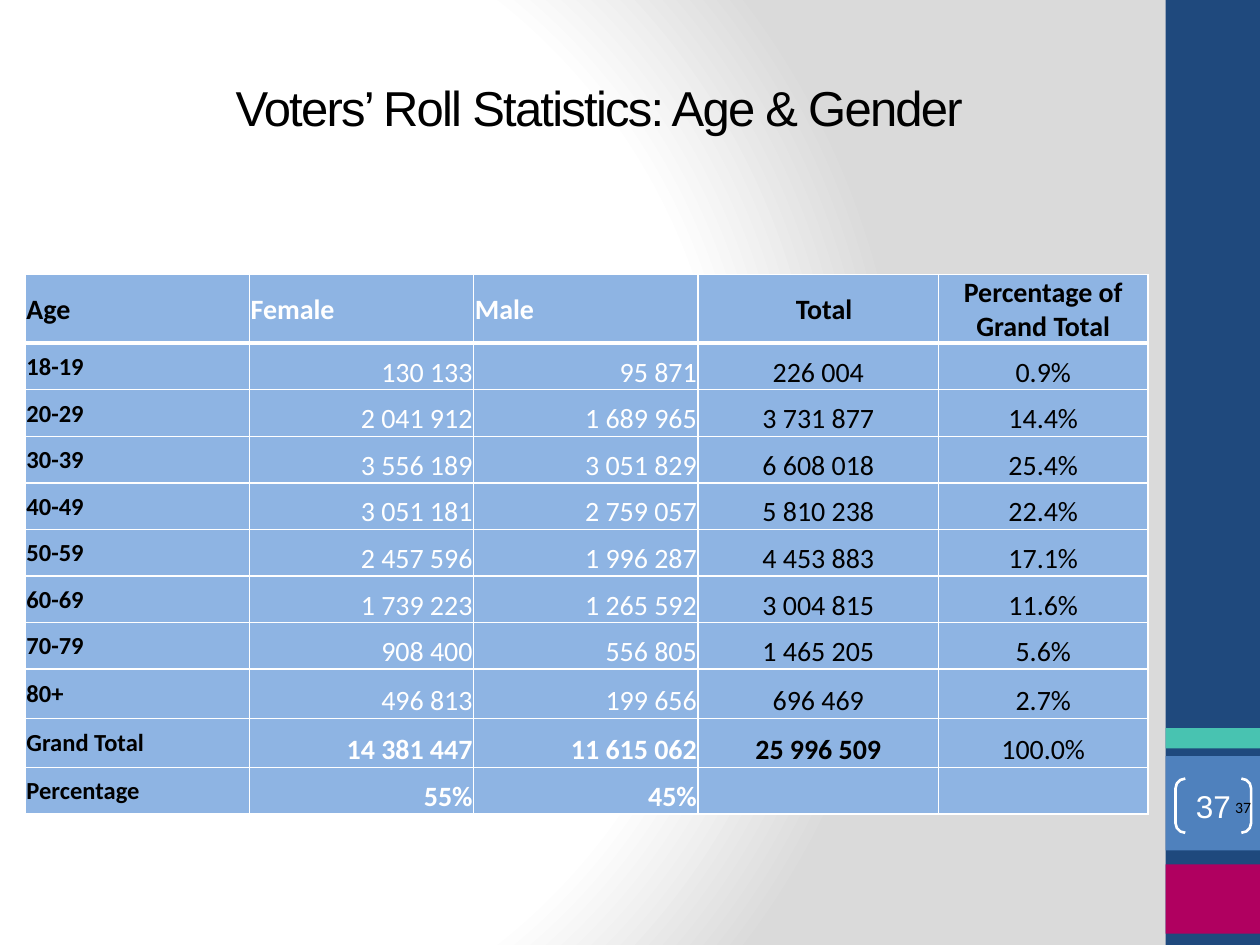
import pptx
import pptx.util
import pptx.dml.color
import pptx.enum.shapes
import pptx.enum.text
import pptx.oxml
import pptx.oxml.ns
from pptx.util import Inches

RGB = pptx.dml.color.RGBColor
ALIGN = pptx.enum.text.PP_ALIGN
ANCHOR = pptx.enum.text.MSO_ANCHOR
SHAPE = pptx.enum.shapes.MSO_SHAPE
NS = pptx.oxml.ns.nsdecls("a", "p")

BLACK = RGB(0x00, 0x00, 0x00)
WHITE = RGB(0xFF, 0xFF, 0xFF)
GREY = RGB(0xDA, 0xDA, 0xDA)
NAVY = RGB(0x1F, 0x49, 0x7D)
BLUE = RGB(0x4F, 0x81, 0xBD)
TEAL = RGB(0x48, 0xC3, 0xB1)
PINK = RGB(0xB0, 0x00, 0x60)
SKY = RGB(0x8E, 0xB4, 0xE3)

HEAD = ["Age", "Female", "Male", "Total", "Percentage of\nGrand Total"]
ROWS = [
    ["18-19", "130 133", "95 871", "226 004", "0.9%"],
    ["20-29", "2 041 912", "1 689 965", "3 731 877", "14.4%"],
    ["30-39", "3 556 189", "3 051 829", "6 608 018", "25.4%"],
    ["40-49", "3 051 181", "2 759 057", "5 810 238", "22.4%"],
    ["50-59", "2 457 596", "1 996 287", "4 453 883", "17.1%"],
    ["60-69", "1 739 223", "1 265 592", "3 004 815", "11.6%"],
    ["70-79", "908 400", "556 805", "1 465 205", "5.6%"],
    ["80+", "496 813", "199 656", "696 469", "2.7%"],
    ["Grand Total", "14 381 447", "11 615 062", "25 996 509", "100.0%"],
    ["Percentage", "55%", "45%", "", ""],
]
WIDTHS = [1.78, 1.78, 1.78, 1.91, 1.66]
HEIGHTS = [0.47] + [0.37] * 7 + [0.39, 0.39, 0.37]


class Deck:
    def __init__(self):
        self.prs = pptx.Presentation()
        self.prs.slide_width, self.prs.slide_height = Inches(10), Inches(7.5)
        self.slide = self.prs.slides.add_slide(self.prs.slide_layouts[5])
        self.shapes = self.slide.shapes

    def back(self):
        """Fill the background with a radial gradient."""
        stops = "".join(
            f'<a:gs pos="{pos * 1000}"><a:srgbClr val="{hue}"/></a:gs>'
            for pos, hue in [(0, WHITE), (75, WHITE), (100, GREY)])
        self.slide.element.cSld.insert(0, pptx.oxml.parse_xml(
            f'<p:bg {NS}><p:bgPr><a:gradFill rotWithShape="1">'
            f'<a:gsLst>{stops}</a:gsLst><a:path path="circle">'
            '<a:fillToRect l="20000" t="50000" r="100000" b="50000"/>'
            '</a:path></a:gradFill><a:effectLst/></p:bgPr></p:bg>'))

    def label(self, frame, text, size, hue, align, face="Calibri", bold=False):
        frame.text = text
        for par in frame.paragraphs:
            par.alignment = align
            font = par.font
            font.name, font.size, font.bold = face, pptx.util.Pt(size), bold
            font.color.rgb = hue

    def inset(self, box, left, top, right, low):
        box.margin_left, box.margin_top = Inches(left), Inches(top)
        box.margin_right, box.margin_bottom = Inches(right), Inches(low)

    def title(self, text, *at):
        box = self.shapes.title
        box.left, box.top, box.width, box.height = map(Inches, at)
        frame = box.text_frame
        frame.vertical_anchor = ANCHOR.MIDDLE
        self.label(frame, text, 28, BLACK, ALIGN.CENTER, "Arial")
        frame.paragraphs[0].runs[0].font._element.set("spc", "-100")

    def bar(self, hue, top, height):
        box = self.shapes.add_shape(
            SHAPE.RECTANGLE, *map(Inches, (9.25, top, 0.75, height)))
        box.shadow.inherit = False
        box.fill.solid()
        box.fill.fore_color.rgb = hue
        box.line.fill.background()

    def badge(self, text, *at):
        """Put the page number between brackets."""
        box = self.shapes.add_shape(SHAPE.DOUBLE_BRACKET, *map(Inches, at))
        box.shadow.inherit = False
        box.adjustments[0] = 0.18
        box.fill.background()
        box.line.color.rgb = WHITE
        box.line.width = pptx.util.Pt(1.5)
        frame = box.text_frame
        frame.vertical_anchor = ANCHOR.MIDDLE
        self.inset(frame, 0, 0, 0, 0)
        self.label(frame, text, 18, WHITE, ALIGN.CENTER, "Arial")

    def note(self, text, *at):
        frame = self.shapes.add_textbox(*map(Inches, at)).text_frame
        frame.word_wrap = True
        frame.vertical_anchor = ANCHOR.MIDDLE
        self.inset(frame, 0.04, 0.04, 0.07, 0.04)
        self.label(frame, text, 9, BLACK, ALIGN.RIGHT)

    def edge(self, cell, row):
        """Draw white borders, thick between the header and the body."""
        thick = {0: "B", 1: "T"}.get(row)
        for side in "LRTB":
            wide = pptx.util.Pt(3 if side == thick else 1)
            cell._tc.get_or_add_tcPr().append(pptx.oxml.parse_xml(
                f'<a:ln{side} {NS} w="{wide}"><a:solidFill>'
                f'<a:srgbClr val="{WHITE}"/></a:solidFill></a:ln{side}>'))

    def cell(self, cell, text, row, col):
        head, first = row == 0, col == 0
        self.edge(cell, row)
        cell.fill.solid()
        cell.fill.fore_color.rgb = SKY
        left = 0.1 if head and col == 3 else 0.01
        self.inset(cell, left, 0.01, 0.01, 0)
        cell.vertical_anchor = ANCHOR.MIDDLE if head or first else ANCHOR.BOTTOM
        if col > 2:
            align = ALIGN.CENTER
        else:
            align = ALIGN.LEFT if head or first else ALIGN.RIGHT
        self.label(cell.text_frame, text,
                   14 if first and not head else 16,
                   WHITE if col in (1, 2) else BLACK, align,
                   bold=head or first or (row > 8 and col < 4))

    def table(self, rows, left, top):
        grid = self.shapes.add_table(
            len(rows), len(WIDTHS), Inches(left), Inches(top),
            Inches(sum(WIDTHS)), Inches(sum(HEIGHTS))).table
        grid.horz_banding = False
        for col, wide in zip(grid.columns, WIDTHS):
            col.width = Inches(wide)
        for line, high in zip(grid.rows, HEIGHTS):
            line.height = Inches(high)
        for row, texts in enumerate(rows):
            for col, text in enumerate(texts):
                self.cell(grid.cell(row, col), text, row, col)


def main():
    deck = Deck()
    deck.back()
    for hue, top, height in [(NAVY, 0, 7.5), (BLUE, 6, 0.75),
                             (TEAL, 5.78, 0.16), (PINK, 6.86, 0.55)]:
        deck.bar(hue, top, height)
    deck.title("Voters’ Roll Statistics: Age & Gender", 0.59, 0.22, 8.33, 1.25)
    deck.badge("37", 9.33, 6.18, 0.6, 0.43)
    deck.note("37", 9.22, 6.26, 0.78, 0.3)
    deck.table([HEAD] + ROWS, 0.2, 2.18)
    deck.prs.save("out.pptx")


if __name__ == "__main__":
    main()
